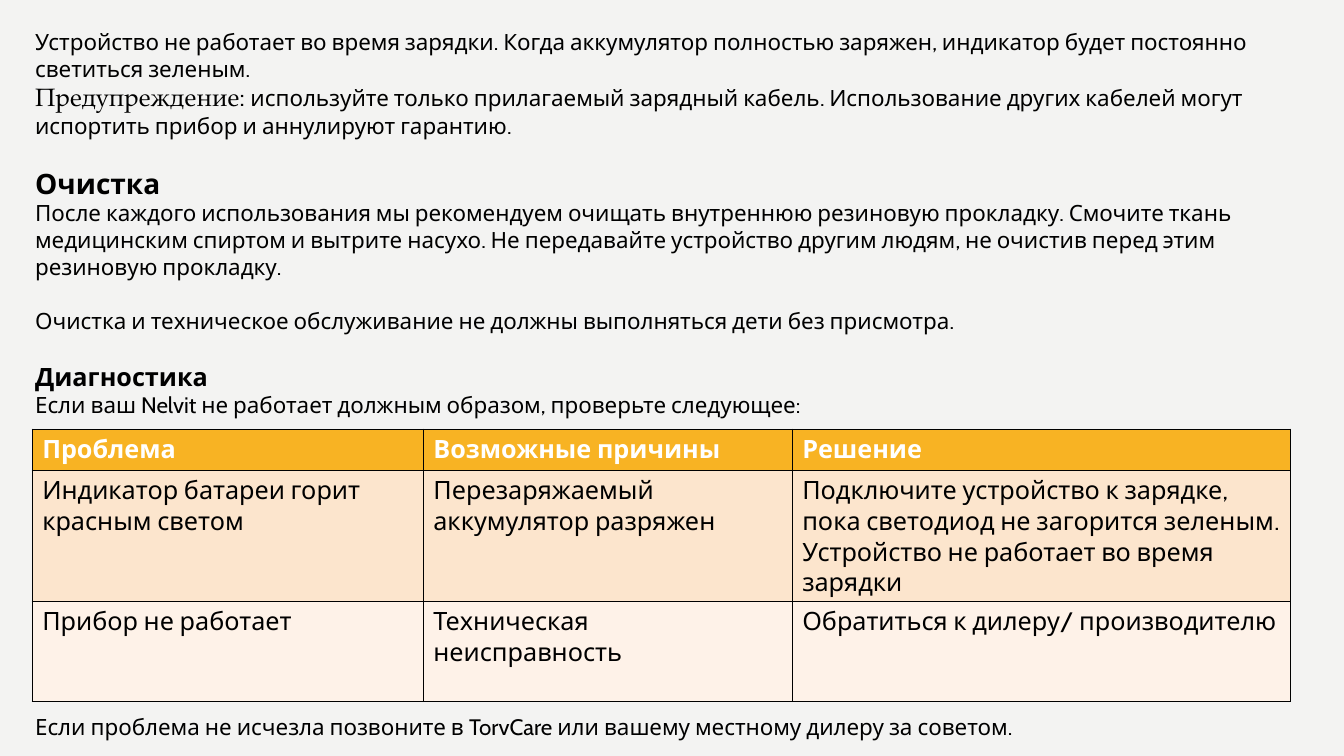
import pptx
import pptx.dml.color
import pptx.oxml.ns
import pptx.util
import lxml.etree

Pt = pptx.util.Pt
RGBColor = pptx.dml.color.RGBColor

BACKGROUND = RGBColor(0xF3, 0xF3, 0xF2)
BLACK = RGBColor(0x00, 0x00, 0x00)
WHITE = RGBColor(0xFF, 0xFF, 0xFF)
AMBER = RGBColor(0xF8, 0xB3, 0x23)
PEACH = RGBColor(0xFC, 0xE5, 0xCD)
CREAM = RGBColor(0xFE, 0xF2, 0xE8)

BODY = {"name": "Cabin", "size": Pt(16), "bold": False}
COLON = {**BODY, "size": Pt(18)}
WARNING = {**BODY, "name": "TeX Gyre Pagella", "size": Pt(18)}
HEADING = {**BODY, "size": Pt(20), "bold": True}
SUBHEADING = {**HEADING, "size": Pt(18)}
CELL = {**BODY, "size": Pt(18)}
BLANK_LINE = 19.4

INSTRUCTIONS = [
    (0, [("Устройство не работает во время зарядки. Когда аккумулятор полностью заряжен, "
          "индикатор будет постоянно светиться зеленым.", BODY)]),
    (0, [("Предупреждение", WARNING), (": ", COLON),
         ("используйте только прилагаемый зарядный кабель. Использование других кабелей "
          "могут испортить прибор и аннулируют гарантию.", BODY)]),
    (BLANK_LINE, [("Очистка", HEADING)]),
    (0, [("После каждого использования мы рекомендуем очищать внутреннюю резиновую прокладку. "
          "Смочите ткань медицинским спиртом и вытрите насухо. Не передавайте устройство другим "
          "людям, не очистив перед этим резиновую прокладку.", BODY)]),
    (BLANK_LINE, [("Очистка и техническое обслуживание не должны выполняться дети без присмотра.",
                   BODY)]),
    (BLANK_LINE, [("Диагностика", SUBHEADING)]),
    (0, [("Если ваш Nelvit не работает должным образом, проверьте следующее:", BODY)]),
]
SUPPORT = [
    (0, [("Если проблема не исчезла позвоните в TorvCare или вашему местному дилеру за советом.",
          BODY)]),
]

COLUMN_WIDTHS = [279.4, 263.5, 355.7]
TROUBLESHOOTING = [
    (29.3, AMBER, WHITE, True, ["Проблема", "Возможные причины", "Решение"]),
    (93.5, PEACH, BLACK, False, [
        "Индикатор батареи горит красным светом",
        "Перезаряжаемый аккумулятор разряжен",
        "Подключите устройство к зарядке, пока светодиод не загорится зеленым. "
        "Устройство не работает во время зарядки"]),
    (71.6, CREAM, BLACK, False, [
        "Прибор не работает", "Техническая неисправность",
        "Обратиться к дилеру/ производителю"]),
]


def add_run(paragraph, text, formatting, color):
    run = paragraph.add_run()
    run.text = text
    for attribute, value in formatting.items():
        setattr(run.font, attribute, value)
    run.font.color.rgb = color


def add_text(slide, left, top, width, height, paragraphs):
    frame = slide.shapes.add_textbox(Pt(left), Pt(top), Pt(width), Pt(height)).text_frame
    frame.word_wrap = True
    for index, (space_before, runs) in enumerate(paragraphs):
        paragraph = frame.add_paragraph() if index else frame.paragraphs[0]
        paragraph.space_before = Pt(space_before)
        for text, formatting in runs:
            add_run(paragraph, text, formatting, BLACK)


def add_borders(cell):
    properties = cell._tc.get_or_add_tcPr()
    for side in ("a:lnL", "a:lnR", "a:lnT", "a:lnB"):
        line = lxml.etree.SubElement(properties, pptx.oxml.ns.qn(side), w=str(Pt(1)))
        fill = lxml.etree.SubElement(line, pptx.oxml.ns.qn("a:solidFill"))
        lxml.etree.SubElement(fill, pptx.oxml.ns.qn("a:srgbClr"), val=str(BLACK))


def fill_cell(cell, text, fill, color, bold):
    add_borders(cell)
    cell.fill.solid()
    cell.fill.fore_color.rgb = fill
    add_run(cell.text_frame.paragraphs[0], text, {**CELL, "bold": bold}, color)


def add_table(slide, left, top, widths, rows):
    height = sum(row[0] for row in rows)
    table = slide.shapes.add_table(len(rows), len(widths), Pt(left), Pt(top),
                                   Pt(sum(widths)), Pt(height)).table
    for column, width in zip(table.columns, widths):
        column.width = Pt(width)
    for row, (row_height, fill, color, bold, texts) in zip(table.rows, rows):
        row.height = Pt(row_height)
        for cell, text in zip(row.cells, texts):
            fill_cell(cell, text, fill, color, bold)


def main():
    presentation = pptx.Presentation()
    presentation.slide_width = Pt(960)
    presentation.slide_height = Pt(540)
    slide = presentation.slides.add_slide(presentation.slide_layouts[6])
    slide.background.fill.solid()
    slide.background.fill.fore_color.rgb = BACKGROUND
    add_text(slide, 18, 16.5, 919.5, 288, INSTRUCTIONS)
    add_table(slide, 23, 306.5, COLUMN_WIDTHS, TROUBLESHOOTING)
    add_text(slide, 18, 505.7, 919.5, 26.5, SUPPORT)
    presentation.save("out.pptx")


if __name__ == "__main__":
    main()
